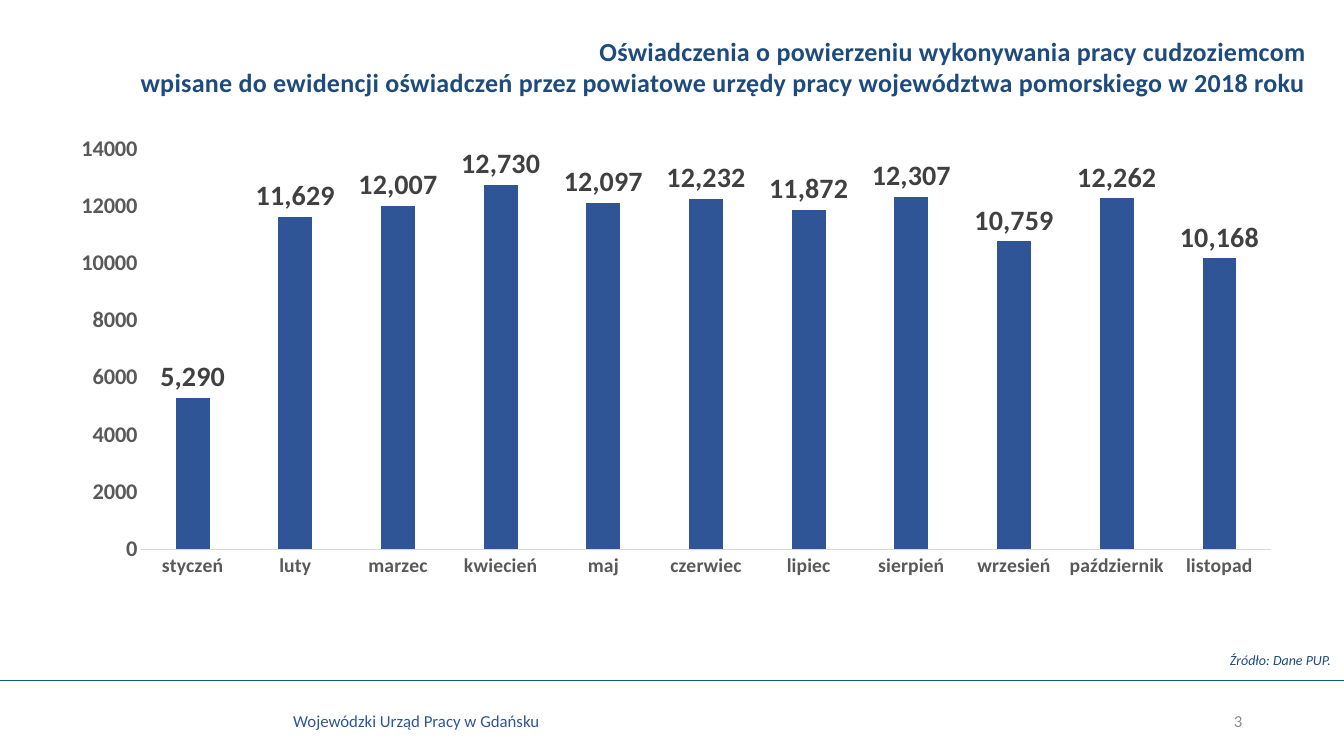
from lxml import etree
from pptx import Presentation
from pptx.chart.data import CategoryChartData
from pptx.dml.color import RGBColor
from pptx.enum.chart import XL_CHART_TYPE, XL_LABEL_POSITION, XL_TICK_MARK
from pptx.enum.shapes import MSO_CONNECTOR
from pptx.enum.text import MSO_ANCHOR, MSO_AUTO_SIZE, PP_ALIGN
from pptx.oxml import parse_xml
from pptx.oxml.ns import nsdecls, qn
from pptx.util import Inches, Pt

NAVY, BLUE, GREY = "1E4B7D", "2F5597", "595959"
WIDTH, HEIGHT = 13.33, 7.5

TITLE = [
    "Oświadczenia o powierzeniu wykonywania pracy cudzoziemcom",
    "wpisane do ewidencji oświadczeń przez powiatowe urzędy pracy "
    "województwa pomorskiego w 2018 roku",
]
MONTHS = {
    "styczeń": 5290, "luty": 11629, "marzec": 12007, "kwiecień": 12730,
    "maj": 12097, "czerwiec": 12232, "lipiec": 11872, "sierpień": 12307,
    "wrzesień": 10759, "październik": 12262, "listopad": 10168,
}


def color(code):
    return RGBColor.from_string(code)


def style(font, size, code, bold=False, italic=False):
    font.name, font.size = "Calibri", Pt(size)
    font.bold, font.italic = bold, italic
    font.color.rgb = color(code)


def add_title(slide, box):
    title = slide.shapes.title
    title.left, title.top, title.width, title.height = map(Inches, box)
    frame = title.text_frame
    frame.text = "\n".join(TITLE)
    frame.auto_size = MSO_AUTO_SIZE.NONE
    frame.word_wrap = True
    frame.vertical_anchor = MSO_ANCHOR.TOP
    frame.margin_right = Inches(0.18)
    for line in frame.paragraphs:
        line.alignment = PP_ALIGN.RIGHT
        for run in line.runs:
            style(run.font, 18.6, NAVY, bold=True)
            run._r.get_or_add_rPr().set("spc", "20")


def add_label(slide, box, text, size, code, align=PP_ALIGN.LEFT,
              anchor=MSO_ANCHOR.TOP, wrap=True, italic=False):
    frame = slide.shapes.add_textbox(*map(Inches, box)).text_frame
    frame.text = text
    frame.word_wrap = wrap
    frame.vertical_anchor = anchor
    line = frame.paragraphs[0]
    line.alignment = align
    style(line.runs[0].font, size, code, italic=italic)


def place_plot(chart, x, y, w, h):
    """Fix the inner plot area, in fractions of the chart box."""
    area = chart._chartSpace.chart.plotArea
    for old in area.findall(qn("c:layout")):
        area.remove(old)
    parts = "".join(f'<c:{tag} val="{val}"/>' for tag, val in [
        ("layoutTarget", "inner"), ("xMode", "edge"), ("yMode", "edge"),
        ("x", x), ("y", y), ("w", w), ("h", h)])
    area.insert(0, parse_xml(
        f'<c:layout {nsdecls("c")}><c:manualLayout>{parts}'
        '</c:manualLayout></c:layout>'))


def add_bars(slide, box):
    data = CategoryChartData()
    data.categories = list(MONTHS)
    data.add_series("Series 1", list(MONTHS.values()))
    chart = slide.shapes.add_chart(
        XL_CHART_TYPE.COLUMN_CLUSTERED, *map(Inches, box), data).chart
    chart.has_legend = chart.has_title = False
    style(chart.font, 10, "000000")
    place_plot(chart, 0.066, 0.028, 0.922, 0.763)

    plot = chart.plots[0]
    plot.gap_width, plot.overlap = 204, -24
    plot.vary_by_categories = False
    fill = plot.series[0].format.fill
    fill.solid()
    fill.fore_color.rgb = color(BLUE)

    plot.has_data_labels = True
    labels = plot.data_labels
    labels.show_value = True
    labels.position = XL_LABEL_POSITION.OUTSIDE_END
    labels.number_format = "#,##0"
    labels.number_format_is_linked = False
    style(labels.font, 20, "404040", bold=True)

    months, scale = chart.category_axis, chart.value_axis
    for axis, size in (months, 14), (scale, 16):
        axis.has_major_gridlines = False
        axis.major_tick_mark = axis.minor_tick_mark = XL_TICK_MARK.NONE
        style(axis.tick_labels.font, size, GREY, bold=True)
    months.format.line.color.rgb = color("D9D9D9")
    months.format.line.width = Pt(1)
    scale.format.line.fill.background()
    scale.minimum_scale, scale.maximum_scale = 0, 14000
    scale.major_unit = 2000
    scale.tick_labels.number_format = "0"
    scale.tick_labels.number_format_is_linked = False


def add_footer(slide, top):
    rule = slide.shapes.add_connector(
        MSO_CONNECTOR.STRAIGHT, 0, Inches(top), Inches(WIDTH), Inches(top))
    rule.line.color.rgb = color("065B8A")
    rule.line.width = Pt(1)
    etree.SubElement(rule._element.spPr, qn("a:effectLst"))
    add_label(slide, (2.81, top + 0.25, 3.56, 0.3),
              "Wojewódzki Urząd Pracy w Gdańsku", 12, BLUE)
    add_label(slide, (9.42, top + 0.2, 3, 0.4), "3", 12, "8C8C8C",
              align=PP_ALIGN.RIGHT, anchor=MSO_ANCHOR.MIDDLE)


def main():
    deck = Presentation()
    deck.slide_width, deck.slide_height = Inches(WIDTH), Inches(HEIGHT)
    slide = deck.slides.add_slide(deck.slide_layouts.get_by_name("Title Only"))
    add_footer(slide, 6.75)
    add_bars(slide, (0.6, 1.33, 12.15, 5.21))
    add_label(slide, (12.1, 6.41, 1.23, 0.27), "Źródło: Dane PUP.", 10, NAVY,
              wrap=False, italic=True)
    add_title(slide, (1.08, 0.3, 12.06, 0.73))
    deck.save("out.pptx")


if __name__ == "__main__":
    main()
